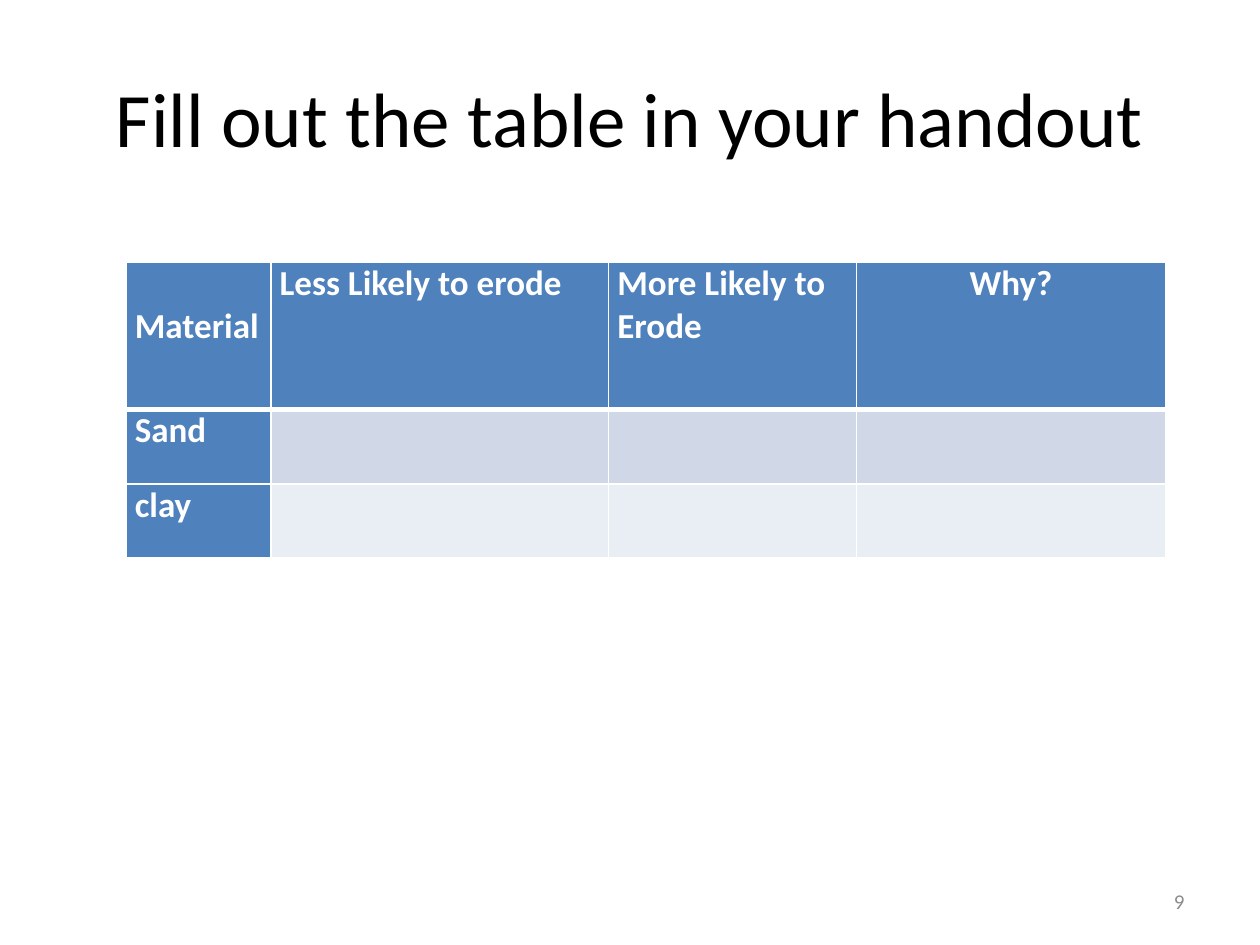
from dataclasses import dataclass

from pptx import Presentation
from pptx import util as u
from pptx.dml.color import RGBColor
from pptx.enum import text
from pptx.oxml.ns import qn
from lxml import etree


@dataclass(frozen=True)
class Theme:
    font: str = "Calibri"
    title_size: int = 44
    table_size: int = 20
    number_size: int = 12
    black: str = "000000"
    white: str = "FFFFFF"
    grey: str = "8C8C8C"
    header: str = "4F81BD"
    bands: tuple = ("D0D8E8", "E9EDF4")
    thin: int = 1
    thick: int = 3


class SlideBuilder:
    def __init__(self, slide, theme):
        self.slide = slide
        self.theme = theme

    def style(self, paragraph, size, color, align, bold=False):
        paragraph.alignment = align
        for run in paragraph.runs:
            run.font.name = self.theme.font
            run.font.size = u.Pt(size)
            run.font.bold = bold
            run.font.color.rgb = RGBColor.from_string(color)
        # A line break takes the same size as the text around it
        for line_break in paragraph._p.findall(qn("a:br")):
            etree.SubElement(line_break, qn("a:rPr"), sz=str(size * 100))

    def text_box(self, box, content, size, color, align):
        shape = self.slide.shapes.add_textbox(*(u.Inches(length) for length in box))
        frame = shape.text_frame
        frame.word_wrap = True
        frame.vertical_anchor = text.MSO_ANCHOR.MIDDLE
        frame.text = content
        self.style(frame.paragraphs[0], size, color, align)

    def borders(self, cell, bottom):
        properties = cell._tc.get_or_add_tcPr()
        widths = {"a:lnL": self.theme.thin, "a:lnR": self.theme.thin,
                  "a:lnT": self.theme.thin, "a:lnB": bottom}
        for index, (tag, width) in enumerate(widths.items()):
            line = etree.Element(qn(tag), w=str(u.Pt(width)))
            fill = etree.SubElement(line, qn("a:solidFill"))
            etree.SubElement(fill, qn("a:srgbClr"), val=self.theme.white)
            properties.insert(index, line)

    def cell(self, cell, content, fill, align, bottom):
        cell.fill.solid()
        cell.fill.fore_color.rgb = RGBColor.from_string(fill)
        self.borders(cell, bottom)
        if not content:
            return
        cell.margin_left = cell.margin_right = u.Inches(0.07)
        cell.margin_top = cell.margin_bottom = 0
        cell.text_frame.text = content
        paragraph = cell.text_frame.paragraphs[0]
        paragraph.space_before = paragraph.space_after = u.Pt(6)
        self.style(paragraph, self.theme.table_size, self.theme.white, align, bold=True)

    def table(self, left, top, widths, heights, rows, header_aligns):
        theme = self.theme
        table = self.slide.shapes.add_table(
            len(rows), len(widths), u.Inches(left), u.Inches(top),
            u.Inches(sum(widths)), u.Inches(sum(heights))).table
        table.first_col = True
        for column, width in zip(table.columns, widths):
            column.width = u.Inches(width)
        for row, height in zip(table.rows, heights):
            row.height = u.Inches(height)
        for r, row in enumerate(rows):
            for c, content in enumerate(row):
                is_header = r == 0 or c == 0
                fill = theme.header if is_header else theme.bands[(r - 1) % 2]
                align = header_aligns[c] if r == 0 else text.PP_ALIGN.LEFT
                bottom = theme.thick if r == 0 else theme.thin
                self.cell(table.cell(r, c), content, fill, align, bottom)
                if r == 1:  # shares its top edge with the heading row
                    edge = table.cell(r, c)._tc.tcPr.find(qn("a:lnT"))
                    edge.set("w", str(u.Pt(theme.thick)))


def main():
    presentation = Presentation()
    presentation.slide_width = u.Inches(10)
    presentation.slide_height = u.Inches(7.5)
    theme = Theme()
    align = text.PP_ALIGN
    builder = SlideBuilder(
        presentation.slides.add_slide(presentation.slide_layouts[6]), theme)

    # Title
    builder.text_box((0.5, 0.3, 9, 1.25), "Fill out the table in your handout",
                     theme.title_size, theme.black, align.CENTER)

    # Erosion table, with blank cells to fill out
    builder.table(
        1, 2.08,
        widths=(1.15, 2.68, 1.97, 2.45),
        heights=(1.17, 0.59, 0.59),
        rows=(("\vMaterial", "Less Likely to erode", "More Likely to Erode", "Why?"),
              ("Sand", "", "", ""),
              ("clay", "", "", "")),
        header_aligns=(align.LEFT, align.LEFT, align.LEFT, align.CENTER))

    # Slide number
    builder.text_box((7.17, 6.95, 2.33, 0.4), "9",
                     theme.number_size, theme.grey, align.RIGHT)

    presentation.save("out.pptx")


if __name__ == "__main__":
    main()
